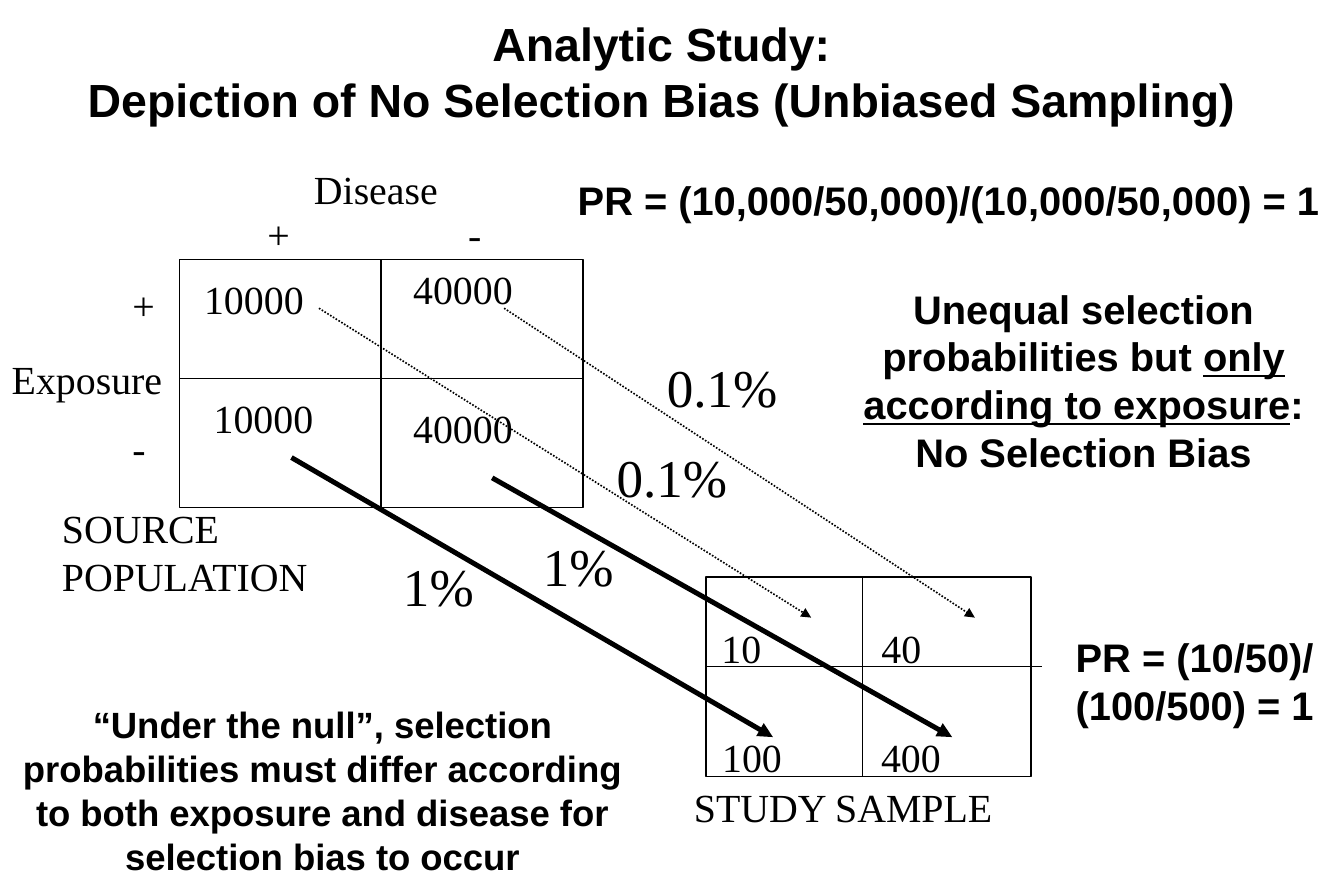
from lxml import etree
from pptx import Presentation
from pptx.dml.color import RGBColor
from pptx.enum.dml import MSO_LINE
from pptx.enum.shapes import MSO_CONNECTOR, MSO_SHAPE
from pptx.enum.text import PP_ALIGN
from pptx.oxml.ns import qn
from pptx.util import Inches, Pt

STRAIGHT = MSO_CONNECTOR.STRAIGHT
RECTANGLE = MSO_SHAPE.RECTANGLE
DOTTED = MSO_LINE.ROUND_DOT
LEFT, CENTER = PP_ALIGN.LEFT, PP_ALIGN.CENTER
SERIF, SANS = "Times New Roman", "Arial"
BLACK = "000000"
TOP, BOTTOM = 0, 2

AXIS_LABELS = [
    ("Disease", (2.53, 1.33, 1.24, 0.5)),
    ("Exposure", (0, 2.92, 1.46, 0.5)),
    ("STUDY SAMPLE", (5.71, 6.5, 2.71, 0.5)),
]
SIGNS = [("+", 2.14, 1.71), ("-", 3.82, 1.71), ("+", 1.01, 2.3), ("-", 1.01, 3.5)]
COUNTS = [
    ("10000", 1.54, 2.25), ("40000", 3.29, 2.17),
    ("10000", 1.62, 3.25), ("40000", 3.29, 3.33),
    ("10", 5.62, 5.17), ("40", 6.96, 5.17),
    ("100", 5.71, 6.08), ("400", 7.04, 6.08),
]
PROBABILITIES = [
    ("1%", 3.21, 4.58, 0.92), ("1%", 4.38, 4.42, 0.92),
    ("0.1%", 5.04, 3.67, 1.17), ("0.1%", 5.46, 2.92, 1.17),
]
EXPOSED_ARROWS = [((2.67, 2.58), (6.79, 5.17)), ((4.22, 2.58), (8.16, 5.17))]
UNEXPOSED_ARROWS = [((2.44, 3.83), (6.47, 6.17)), ((4.12, 4), (7.97, 6.17))]
CONCLUSIONS = [
    (["PR = (10,000/50,000)/(10,000/50,000) = 1"], (4.42, 1.42, 7.04, 0.5), 24),
    (["PR = (10/50)/ (100/500) = 1"], (8.46, 5.25, 3.08, 0.91), 24),
    (["Unequal selection probabilities but _only according to exposure_:",
      "No Selection Bias"], (6.88, 2.33, 4.38, 1.72), 24),
    (["“Under the null”, selection probabilities must differ according to both "
      "exposure and disease for selection bias to occur"],
     (0.03, 5.83, 5.34, 1.62), 22),
]


def color(value):
    """Turn a hex string into a colour."""
    return RGBColor.from_string(value)


def add_text(slide, lines, box, size=24, font=SERIF, bold=False, align=LEFT, wrap=True):
    """Write lines in a box, underlining what stands between underscores."""
    frame = slide.shapes.add_textbox(*map(Inches, box)).text_frame
    frame.word_wrap = wrap
    for index, line in enumerate(lines):
        paragraph = frame.add_paragraph() if index else frame.paragraphs[0]
        paragraph.alignment = align
        paragraph.font.name = font
        paragraph.font.size = Pt(size)
        paragraph.font.bold = bold
        paragraph.font.color.rgb = color(BLACK)
        for position, part in enumerate(line.split("_")):
            run = paragraph.add_run()
            run.text = part
            if position % 2:
                run.font.underline = True


def add_line(slide, start, end, width=0.75):
    """Draw a straight black line without a shadow."""
    line = slide.shapes.add_connector(STRAIGHT, *map(Inches, (*start, *end)))
    line.line.width = Pt(width)
    line.line.color.rgb = color(BLACK)
    etree.SubElement(line._element.spPr, qn("a:effectLst"))
    return line


def add_arrow(slide, start, end, width, dash=None):
    """Draw a sampling arrow from the population to the sample."""
    arrow = add_line(slide, start, end, width)
    if dash is not None:
        arrow.line.dash_style = dash
    etree.SubElement(arrow.line._get_or_add_ln(), qn("a:tailEnd"), type="triangle")


def add_grid(slide, box, column_x, row_y, row_end):
    """Draw a two-by-two frame and return it with its column divider."""
    left, top, width, height = box
    frame = slide.shapes.add_shape(RECTANGLE, *map(Inches, box))
    frame.shadow.inherit = False
    frame.fill.background()
    frame.line.color.rgb = color(BLACK)
    frame.line.width = Pt(0.75)
    divider = add_line(slide, (column_x, top), (column_x, top + height))
    add_line(slide, (left, row_y), (row_end, row_y))
    return frame, divider


def main():
    """Build the slide on unbiased sampling."""
    deck = Presentation()
    deck.slide_width, deck.slide_height = Inches(11.25), Inches(7.5)
    slide = deck.slides.add_slide(deck.slide_layouts[6])

    population, divider = add_grid(slide, (1.5, 2.17, 3.38, 2.08), 3.19, 3.17, 4.88)
    divider.begin_connect(population, TOP)
    divider.end_connect(population, BOTTOM)
    add_grid(slide, (5.91, 4.83, 2.72, 1.67), 7.22, 5.58, 8.72)

    for start, end in EXPOSED_ARROWS:
        add_arrow(slide, start, end, 1, DOTTED)
    for start, end in UNEXPOSED_ARROWS:
        add_arrow(slide, start, end, 3)

    add_text(slide, ["Analytic Study:",
                     "Depiction of No Selection Bias (Unbiased Sampling)"],
             (0.58, 0.08, 9.91, 1.03), 28, SANS, True, CENTER, wrap=False)
    for label, box in AXIS_LABELS:
        add_text(slide, [label], box, wrap=False)
    add_text(slide, ["SOURCE POPULATION"], (0.42, 4.17, 2.5, 0.91))
    for sign, left, top in SIGNS:
        add_text(slide, [sign], (left, top, 0.44, 0.5))
    for count, left, top in COUNTS:
        add_text(slide, [count], (left, top, 1.17, 0.5), align=CENTER)
    for share, left, top, width in PROBABILITIES:
        add_text(slide, [share], (left, top, width, 0.63), 32, align=CENTER)
    for lines, box, size in CONCLUSIONS:
        add_text(slide, lines, box, size, SANS, True, CENTER)

    deck.save("out.pptx")


if __name__ == "__main__":
    main()
